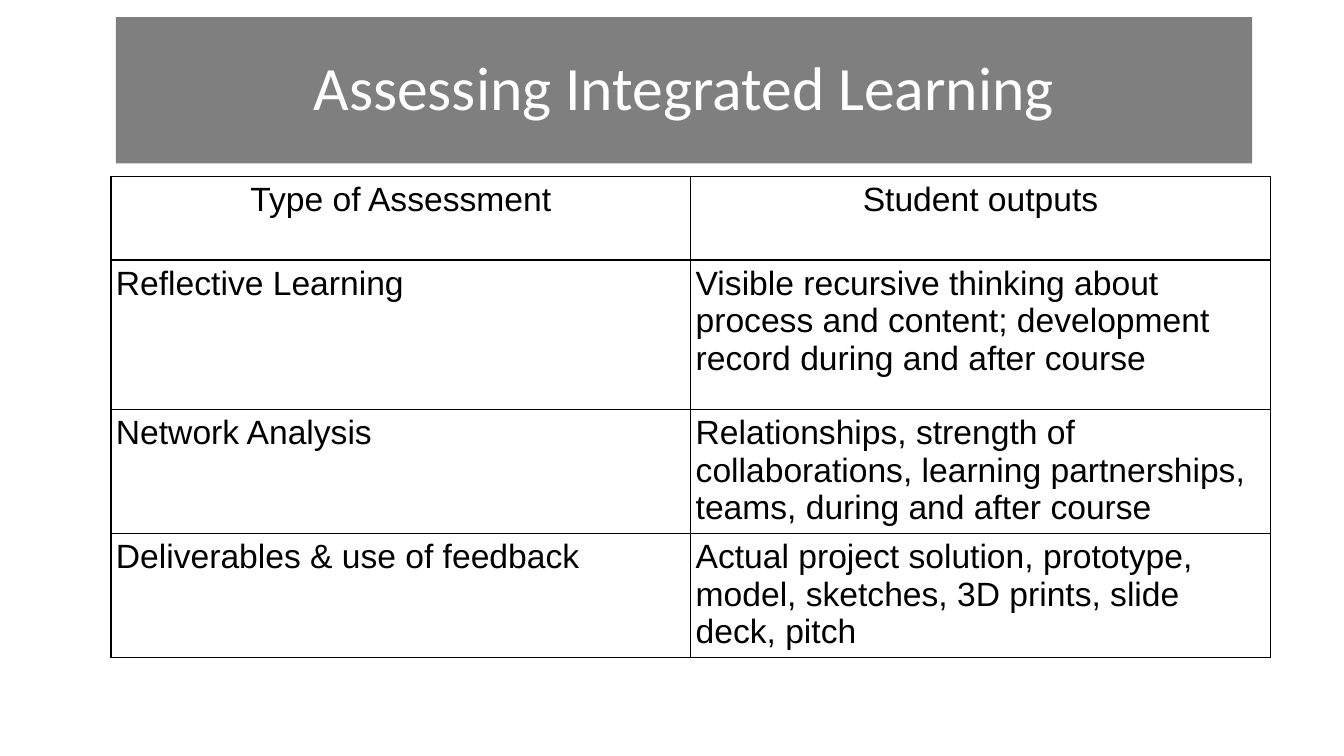
from lxml import etree
from pptx import Presentation
from pptx.dml.color import RGBColor
from pptx.enum.text import MSO_ANCHOR, PP_ALIGN
from pptx.oxml.ns import qn
from pptx.util import Inches, Pt

TITLE = "Assessing Integrated Learning"
ROWS = [
    ("Type of Assessment", "Student outputs"),
    ("Reflective Learning",
     "Visible recursive thinking about process and content; "
     "development record during and after course"),
    ("Network Analysis",
     "Relationships, strength of collaborations, learning partnerships, "
     "teams, during and after course"),
    ("Deliverables & use of feedback",
     "Actual project solution, prototype, model, sketches, 3D prints, "
     "slide deck, pitch"),
]
ROW_HEIGHTS = [0.83, 1.48, 1.23, 1.23]
COLUMN_WIDTH = 5.75
CELL_MARGIN = Inches(0.05)
TITLE_BOX = {"left": 1.15, "top": 0.17, "width": 11.27, "height": 1.45}

BLACK = RGBColor(0, 0, 0)
WHITE = RGBColor(255, 255, 255)
TITLE_FONT = {"name": "Calibri", "size": Pt(44)}
CELL_FONT = {"name": "Arial", "size": Pt(24), "bold": False}


def write_text(text_frame, text, font, color, alignment):
    paragraph = text_frame.paragraphs[0]
    paragraph.alignment = alignment
    run = paragraph.add_run()
    run.text = text
    for name, value in font.items():
        setattr(run.font, name, value)
    run.font.color.rgb = color
    return paragraph


def add_borders(cell):
    """Draw a 1 pt black line on all four sides of the cell."""
    properties = cell._tc.get_or_add_tcPr()
    for position, tag in enumerate(("a:lnL", "a:lnR", "a:lnT", "a:lnB")):
        line = etree.Element(qn(tag), w=str(Pt(1)))
        fill = etree.SubElement(line, qn("a:solidFill"))
        etree.SubElement(fill, qn("a:srgbClr"), val=str(BLACK))
        properties.insert(position, line)


def add_title(slide):
    title = slide.shapes.title
    for name, value in TITLE_BOX.items():
        setattr(title, name, Inches(value))
    title.fill.solid()
    title.fill.fore_color.rgb = BLACK
    color = title.fill._xPr.find(qn("a:solidFill")).find(qn("a:srgbClr"))
    etree.SubElement(color, qn("a:alpha"), val="50000")
    title.text_frame.vertical_anchor = MSO_ANCHOR.MIDDLE
    paragraph = write_text(title.text_frame, TITLE, TITLE_FONT, WHITE, PP_ALIGN.CENTER)
    paragraph.line_spacing = 0.9


def add_assessment_table(slide):
    columns = len(ROWS[0])
    table = slide.shapes.add_table(
        len(ROWS), columns, Inches(1.1), Inches(1.75),
        Inches(COLUMN_WIDTH * columns), Inches(sum(ROW_HEIGHTS))).table
    for column in table.columns:
        column.width = Inches(COLUMN_WIDTH)
    for row_index, texts in enumerate(ROWS):
        table.rows[row_index].height = Inches(ROW_HEIGHTS[row_index])
        alignment = PP_ALIGN.LEFT if row_index else PP_ALIGN.CENTER
        for column_index, text in enumerate(texts):
            cell = table.cell(row_index, column_index)
            cell.fill.background()
            for side in ("left", "right", "top", "bottom"):
                setattr(cell, f"margin_{side}", CELL_MARGIN)
            add_borders(cell)
            write_text(cell.text_frame, text, CELL_FONT, BLACK, alignment)


def main():
    presentation = Presentation()
    presentation.slide_width = Inches(13.33)
    presentation.slide_height = Inches(7.5)
    slide = presentation.slides.add_slide(presentation.slide_layouts[5])
    add_assessment_table(slide)
    add_title(slide)
    presentation.save("out.pptx")


if __name__ == "__main__":
    main()
